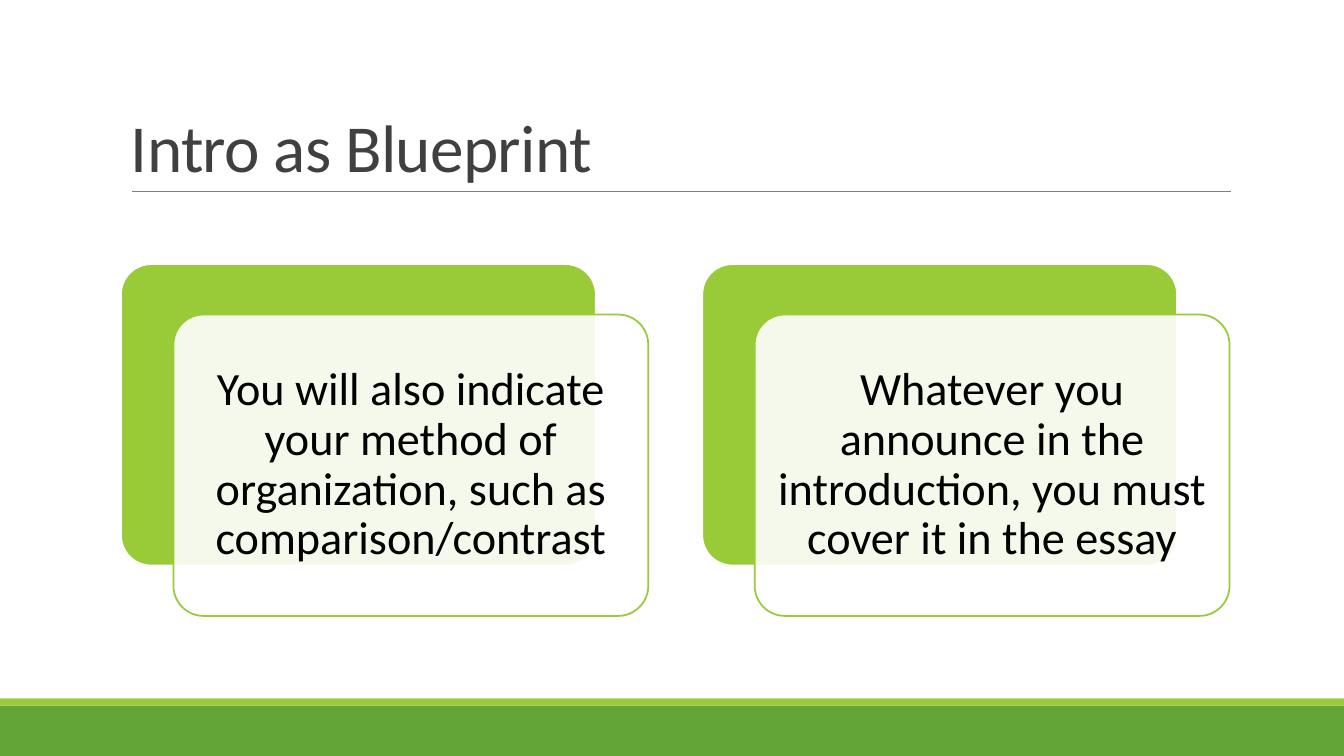
import pptx
import pptx.util
import pptx.dml.color
import pptx.enum.shapes
import pptx.enum.text
import pptx.oxml.ns
import lxml.etree

Inches = pptx.util.Inches
Pt = pptx.util.Pt
Shape = pptx.enum.shapes.MSO_SHAPE
Align = pptx.enum.text.PP_ALIGN
Anchor = pptx.enum.text.MSO_ANCHOR
qn = pptx.oxml.ns.qn

LIME = "99CB38"
CARD_WIDTH, CARD_HEIGHT = 4.71, 2.99
CARD_LEFT, CARD_TOP, CARD_STEP = 1.2, 2.62, 5.765
FRONT_SHIFT_X, FRONT_SHIFT_Y = 0.52, 0.5
TEXT_MARGIN = 0.09
CARD_TEXTS = [
    "You will also indicate your method of organization, such as comparison/contrast",
    "Whatever you announce in the introduction, you must cover it in the essay",
]


def color(value):
    return pptx.dml.color.RGBColor.from_string(value)


def add_block(page, kind, left, top, width, height, fill, line=None, opacity=None):
    block = page.shapes.add_shape(
        kind, Inches(left), Inches(top), Inches(width), Inches(height))
    block.shadow.inherit = False
    block.fill.solid()
    block.fill.fore_color.rgb = color(fill)
    if opacity is not None:
        fill_color = block._element.spPr.find(qn("a:solidFill"))[0]
        alpha = lxml.etree.SubElement(fill_color, qn("a:alpha"))
        alpha.set("val", str(opacity * 1000))
    if line:
        block.line.color.rgb = color(line)
        block.line.width = Pt(1.25)
    else:
        block.line.fill.background()
    if kind == Shape.ROUNDED_RECTANGLE:
        block.adjustments[0] = 0.1
    return block


def add_text(page, text, left, top, width, height, size, ink, align=Align.LEFT,
             anchor=Anchor.MIDDLE, inset=0.1, line_spacing=0.9, tracking=0):
    box = page.shapes.add_textbox(
        Inches(left), Inches(top), Inches(width), Inches(height))
    frame = box.text_frame
    frame.word_wrap = True
    frame.vertical_anchor = anchor
    frame.margin_left = frame.margin_right = Inches(inset)
    frame.margin_top = frame.margin_bottom = Inches(min(inset, 0.05) if inset == 0.1 else inset)
    para = frame.paragraphs[0]
    para.alignment = align
    para.line_spacing = line_spacing
    span = para.add_run()
    span.text = text
    span.font.name = "Calibri"
    span.font.size = Pt(size)
    span.font.color.rgb = color(ink)
    if tracking:
        span._r.get_or_add_rPr().set("spc", str(int(tracking * 100)))


def add_rule(page, left, right, top):
    rule = page.shapes.add_connector(
        pptx.enum.shapes.MSO_CONNECTOR.STRAIGHT,
        Inches(left), Inches(top), Inches(right), Inches(top))
    rule.line.color.rgb = color("808080")
    rule.line.width = Pt(0.5)
    lxml.etree.SubElement(rule._element.spPr, qn("a:effectLst"))


def add_card(page, left, text):
    front_left = left + FRONT_SHIFT_X
    front_top = CARD_TOP + FRONT_SHIFT_Y
    add_block(page, Shape.ROUNDED_RECTANGLE, left, CARD_TOP,
              CARD_WIDTH, CARD_HEIGHT, LIME, line="FFFFFF")
    add_block(page, Shape.ROUNDED_RECTANGLE, front_left, front_top,
              CARD_WIDTH, CARD_HEIGHT, "FFFFFF", line=LIME, opacity=90)
    add_text(page, text, front_left + TEXT_MARGIN, front_top + TEXT_MARGIN,
             CARD_WIDTH - 2 * TEXT_MARGIN, CARD_HEIGHT - 2 * TEXT_MARGIN,
             size=33, ink="000000", align=Align.CENTER, inset=0.14)


def main():
    deck = pptx.Presentation()
    deck.slide_width = Inches(13.33)
    deck.slide_height = Inches(7.5)
    page = deck.slides.add_slide(deck.slide_layouts[6])
    add_block(page, Shape.RECTANGLE, 0, 7, 13.33, 0.5, "63A537")
    add_block(page, Shape.RECTANGLE, 0, 6.93, 13.33, 0.07, LIME)
    add_rule(page, 1.31, 12.21, 1.9)
    add_text(page, "Intro as Blueprint", 1.2, 0.31, 11, 1.59, size=48, ink="404040",
             anchor=Anchor.BOTTOM, line_spacing=0.85, tracking=-0.5)
    for index, text in enumerate(CARD_TEXTS):
        add_card(page, CARD_LEFT + index * CARD_STEP, text)
    deck.save("out.pptx")


if __name__ == "__main__":
    main()
